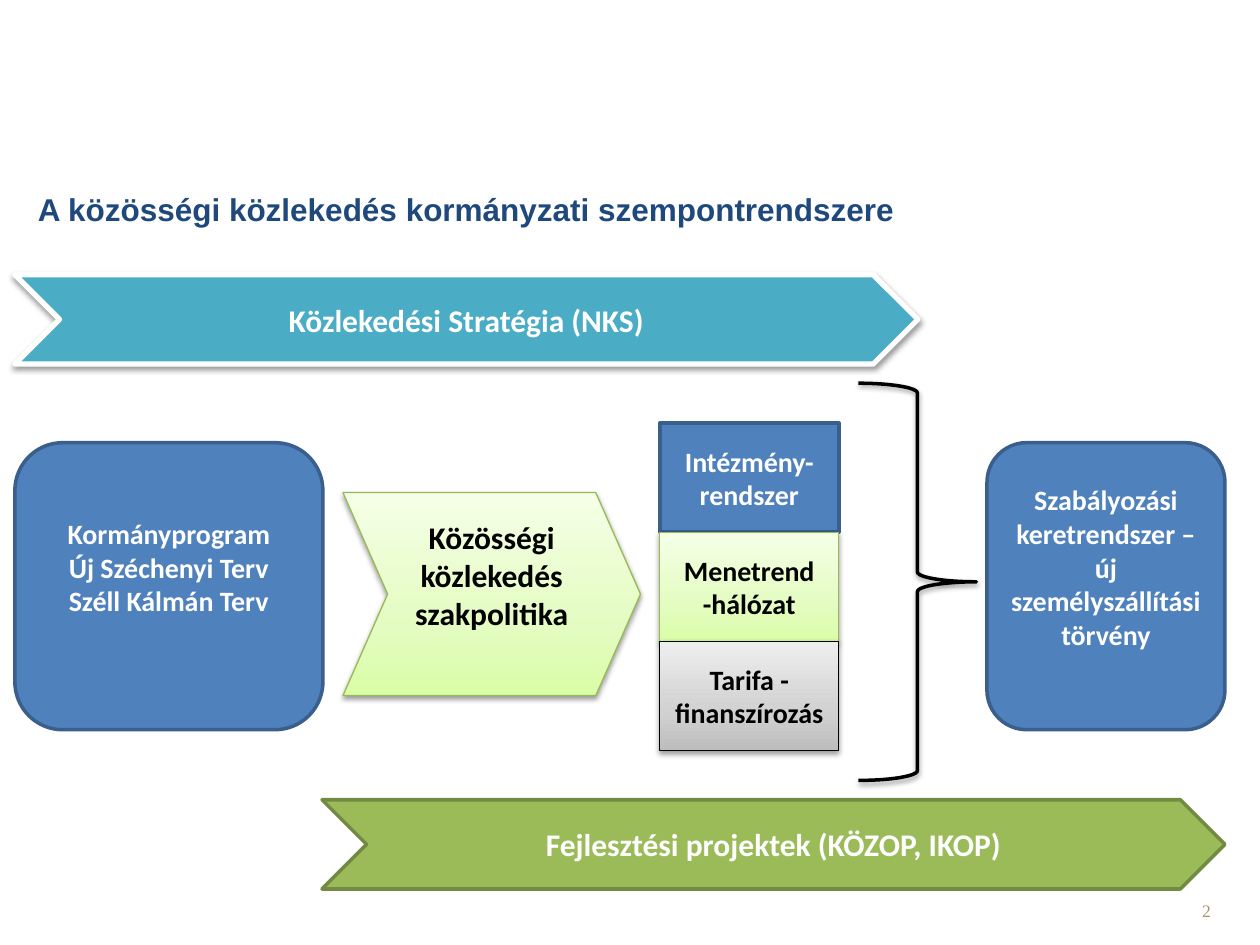
import copy

import pptx
import pptx.dml.color
import pptx.enum.shapes
import pptx.enum.text
import pptx.oxml
import pptx.oxml.ns
import pptx.util

Pt = pptx.util.Pt
RGB = pptx.dml.color.RGBColor
SHAPE = pptx.enum.shapes.MSO_SHAPE
ALIGN = pptx.enum.text.PP_ALIGN
ANCHOR = pptx.enum.text.MSO_ANCHOR
qn = pptx.oxml.ns.qn

WHITE = RGB(0xFF, 0xFF, 0xFF)
BLACK = RGB(0x00, 0x00, 0x00)
NAVY = RGB(0x1F, 0x49, 0x7D)
TAN = RGB(0xA6, 0x97, 0x65)
BLUE = RGB(0x4F, 0x81, 0xBD)
BLUE_EDGE = RGB(0x3A, 0x5F, 0x8C)
TEAL = RGB(0x4B, 0xAC, 0xC6)
GREEN = RGB(0x9B, 0xBB, 0x59)
GREEN_EDGE = RGB(0x73, 0x8A, 0x42)
LIME_EDGE = RGB(0x98, 0xB9, 0x55)
LIME_FADE = [RGB(0xDA, 0xFD, 0xA7), RGB(0xE4, 0xFC, 0xC2), RGB(0xF5, 0xFF, 0xE7)]
GRAY_FADE = [RGB(0xBD, 0xBD, 0xBD), RGB(0xD1, 0xD1, 0xD1), RGB(0xEE, 0xEE, 0xEE)]
FADE_POSITIONS = [0, 0.35, 1]

SHADOW_XML = (
    '<a:outerShdw xmlns:a="http://schemas.openxmlformats.org/drawingml/2006/main"'
    ' blurRad="40000" dist="20000" dir="5400000" rotWithShape="0">'
    '<a:srgbClr val="000000"><a:alpha val="38000"/></a:srgbClr></a:outerShdw>'
)


def write_text(frame, lines, align, font):
    frame.word_wrap = True
    frame.text = "\n".join(lines)
    for paragraph in frame.paragraphs:
        paragraph.alignment = align
        for key, value in font.items():
            if key == "color":
                paragraph.font.color.rgb = value
            else:
                setattr(paragraph.font, key, value)


def style_shape(shape, fill, edge, edge_width, shadowed):
    if isinstance(fill, list):
        shape.fill.gradient()
        shape.fill.gradient_angle = 90
        stop_list = shape.element.spPr.find(".//" + qn("a:gsLst"))
        stop_list.append(copy.deepcopy(stop_list[-1]))
        for stop, color, position in zip(shape.fill.gradient_stops, fill, FADE_POSITIONS):
            stop.color.rgb = color
            stop.position = position
    elif fill is None:
        shape.fill.background()
    else:
        shape.fill.solid()
        shape.fill.fore_color.rgb = fill
    shape.line.color.rgb = edge
    shape.line.width = Pt(edge_width)
    shape.shadow.inherit = False
    if shadowed:
        effects = shape.element.spPr.find(qn("a:effectLst"))
        effects.append(pptx.oxml.parse_xml(SHADOW_XML))


presentation = pptx.Presentation()
presentation.slide_width = Pt(720)
presentation.slide_height = Pt(540)
slide = presentation.slides.add_slide(presentation.slide_layouts[5])

# Title
title = slide.shapes.title
title.left, title.top, title.width, title.height = Pt(14.4), Pt(105), Pt(572), Pt(29)
title.text_frame.auto_size = pptx.enum.text.MSO_AUTO_SIZE.NONE
title.text_frame.vertical_anchor = ANCHOR.MIDDLE
write_text(title.text_frame, ["A közösségi közlekedés kormányzati szempontrendszere"], ALIGN.LEFT,
           {"name": "Arial", "size": Pt(18), "bold": True, "color": NAVY})

# Slide number
page_number = slide.shapes.add_textbox(Pt(531), Pt(505.5), Pt(168), Pt(29))
page_number.text_frame.vertical_anchor = ANCHOR.MIDDLE
write_text(page_number.text_frame, ["2"], ALIGN.RIGHT,
           {"name": "Times New Roman", "size": Pt(10), "color": TAN})

# Brace that gathers the policy areas
brace = slide.shapes.add_shape(SHAPE.RIGHT_BRACE, Pt(490.5), Pt(219), Pt(67.5), Pt(227))
style_shape(brace, None, BLACK, 2, True)

# Boxes and arrows: kind, place, fill, edge, edge width, shadow, lines, size, colour, text lift
STACK_LEFT, STACK_TOP, STACK_WIDTH, STACK_STEP = 377, 241.7, 102.3, 62.4
stack = [
    (BLUE, BLUE_EDGE, 2, False, ["Intézmény-rendszer"], 16, WHITE),
    (LIME_FADE, LIME_EDGE, 0.75, True, ["Menetrend -hálózat"], 16, BLACK),
    (GRAY_FADE, BLACK, 0.75, True, ["Tarifa - finanszírozás"], 16, BLACK),
]
parts = [
    (SHAPE.RECTANGLE, (STACK_LEFT, STACK_TOP + row * STACK_STEP, STACK_WIDTH, STACK_STEP), *area, 0)
    for row, area in enumerate(stack)
]
parts += [
    (SHAPE.ROUNDED_RECTANGLE, (8.5, 253, 176, 164), BLUE, BLUE_EDGE, 2, False,
     ["Kormányprogram", "Új Széchenyi Terv", "Széll Kálmán Terv"], 16, WHITE, 22),
    (SHAPE.CHEVRON, (196, 281.5, 170, 116), LIME_FADE, LIME_EDGE, 0.75, True,
     ["Közösségi közlekedés", "szakpolitika"], 18, BLACK, 22),
    (SHAPE.ROUNDED_RECTANGLE, (564, 253, 136, 164), BLUE, BLUE_EDGE, 2, False,
     ["Szabályozási keretrendszer – új személyszállítási törvény"], 16, WHITE, 22),
    (SHAPE.CHEVRON, (8.5, 157, 516, 51), TEAL, WHITE, 3, True,
     ["Közlekedési Stratégia (NKS)"], 18, WHITE, 0),
    (SHAPE.CHEVRON, (184, 457, 516, 51), GREEN, GREEN_EDGE, 2, False,
     ["Fejlesztési projektek (KÖZOP, IKOP)"], 18, WHITE, 0),
]
for kind, place, fill, edge, edge_width, shadowed, lines, size, color, lift in parts:
    part = slide.shapes.add_shape(kind, *map(Pt, place))
    style_shape(part, fill, edge, edge_width, shadowed)
    if lines[-1] == "szakpolitika":
        part.adjustments[0] = 0.22
    frame = part.text_frame
    frame.vertical_anchor = ANCHOR.MIDDLE
    frame.margin_left = frame.margin_right = Pt(6.5)
    frame.margin_bottom = Pt(3.6 + lift)
    write_text(frame, lines, ALIGN.CENTER,
               {"name": "Calibri", "size": Pt(size), "bold": True, "color": color})

presentation.save("out.pptx")
